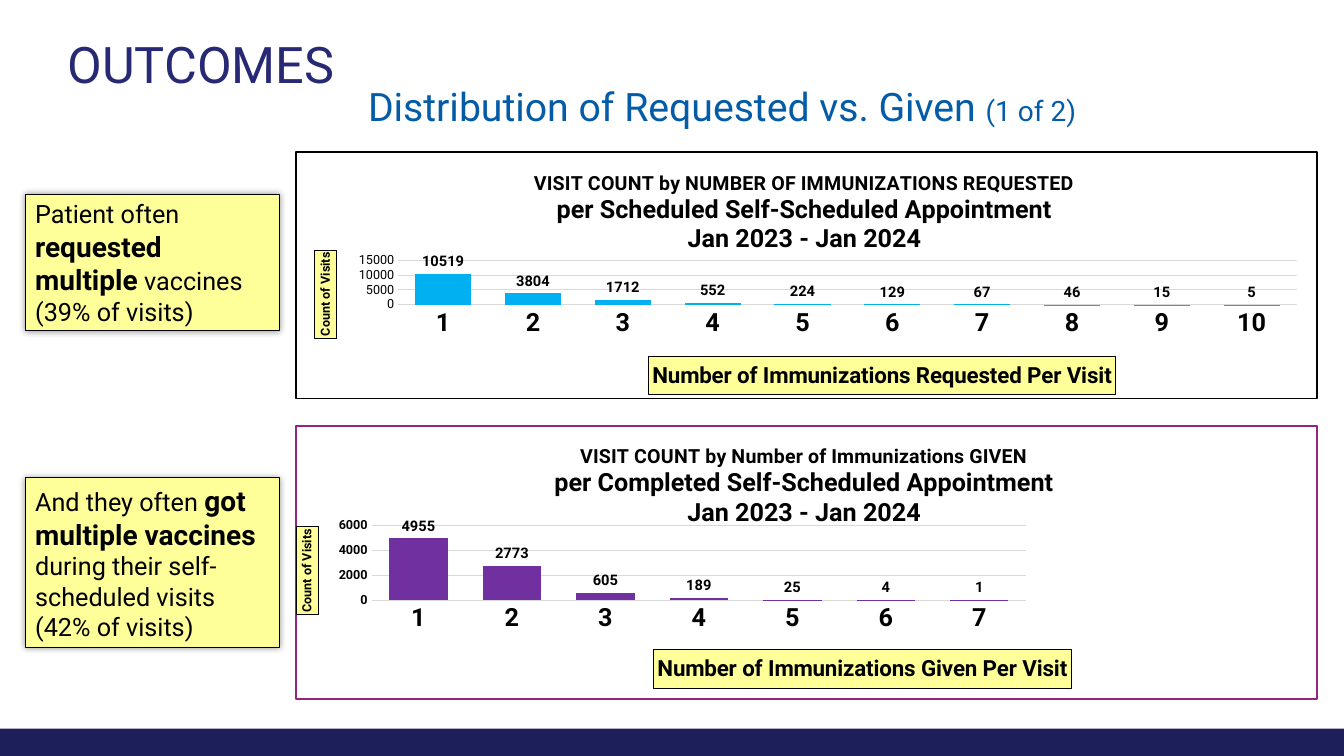
"""Build the outcomes slide comparing immunizations requested with immunizations given."""
from lxml import etree
from pptx import Presentation, util as u
from pptx.chart.data import CategoryChartData
from pptx.dml.color import RGBColor
from pptx.enum import chart as ch, shapes, text
from pptx.oxml import parse_xml
from pptx.oxml.ns import nsdecls, qn

COLORS = {"navy": "1D1F5B", "title": "272974", "subtitle": "045CA7", "note": "FFFF99", "black": "000000",
          "white": "FFFFFF", "grid": "D9D9D9", "requested": "00B0F0", "given": "7030A0", "given_edge": "902681"}
FONT = "Roboto"
WIDTH, HEIGHT = 13.33, 7.5
NOTE_LEFT, NOTE_WIDTH = 0.25, 2.52
CHART_LEFT, CHART_WIDTH = 2.93, 10.14


def style(font, size, color="black", bold=False):
    font.name, font.size, font.bold = FONT, u.Pt(size), bold
    font.color.rgb = RGBColor.from_string(COLORS[color])


def set_layout(element, *shares):
    for stale in element.findall(qn("c:layout")):
        element.remove(stale)
    layout = parse_xml(f'<c:layout {nsdecls("c")}><c:manualLayout/></c:layout>')
    tags = ["xMode", "yMode", "x", "y", "w", "h"][:2 + len(shares)]
    values = ["edge", "edge", *shares]
    if len(shares) == 4:
        tags, values = ["layoutTarget", *tags], ["inner", *values]
    for tag, value in zip(tags, values):
        etree.SubElement(layout[0], qn(f"c:{tag}")).set("val", str(value))
    element.insert(0 if element.find(qn("c:tx")) is None else 1, layout)


prs = Presentation()
prs.slide_width, prs.slide_height = u.Inches(WIDTH), u.Inches(HEIGHT)
slide = prs.slides.add_slide(prs.slide_layouts[1])

headings = [
    (slide.shapes.title, (0.67, 0.38, 12.06, 0.57), [("OUTCOMES", 36)], "title"),
    (slide.placeholders[1], (3.65, 0.88, 9.07, 0.4),
     [("Distribution of Requested vs. Given ", 28), ("(1 of 2)", 20)], "subtitle"),
]
for heading, place, pieces, color in headings:
    heading.left, heading.top, heading.width, heading.height = map(u.Inches, place)
    frame = heading.text_frame
    frame.margin_left = frame.margin_right = frame.margin_top = frame.margin_bottom = 0
    frame.vertical_anchor, frame.auto_size = text.MSO_ANCHOR.MIDDLE, text.MSO_AUTO_SIZE.NONE
    line = frame.paragraphs[0]
    line.alignment, line.line_spacing, line.space_before = text.PP_ALIGN.LEFT, 0.9, u.Pt(0)
    properties = line._p.get_or_add_pPr()
    properties.set("marL", "0")
    properties.set("indent", "0")
    etree.SubElement(properties, qn("a:buNone"))
    for wording, size in pieces:
        run = line.add_run()
        run.text = wording
        style(run.font, size, color)

footer = slide.shapes.add_shape(shapes.MSO_SHAPE.RECTANGLE, 0, u.Inches(7.23), prs.slide_width, u.Inches(0.27))
footer.shadow.inherit = False
footer.fill.solid()
footer.fill.fore_color.rgb = RGBColor.from_string(COLORS["navy"])
footer.line.fill.background()

notes = [
    (1.93, 1.35, [[("Patient often ", False), ("requested multiple", True), (" vaccines", False)],
                  [("(39% of visits)", False)]]),
    (4.74, 1.68, [[("And they often ", False), ("got multiple vaccines ", True),
                   ("during their self-scheduled visits", False)], [("(42% of visits)", False)]]),
]
for top, height, paragraphs in notes:
    note = slide.shapes.add_shape(shapes.MSO_SHAPE.RECTANGLE, *map(u.Inches, (NOTE_LEFT, top, NOTE_WIDTH, height)))
    note.fill.solid()
    note.fill.fore_color.rgb = RGBColor.from_string(COLORS["note"])
    note.line.color.rgb = RGBColor.from_string(COLORS["black"])
    note.line.width = u.Pt(0.75)
    note.shadow.inherit = False
    note._element.spPr.find(qn("a:effectLst")).append(parse_xml(
        f'<a:outerShdw {nsdecls("a")} blurRad="{u.Pt(5)}" dist="0" dir="0" algn="ctr" rotWithShape="0">'
        f'<a:srgbClr val="{COLORS["black"]}"><a:alpha val="40000"/></a:srgbClr></a:outerShdw>'))
    frame = note.text_frame
    frame.word_wrap, frame.vertical_anchor = True, text.MSO_ANCHOR.MIDDLE
    for index, pieces in enumerate(paragraphs):
        line = frame.add_paragraph() if index else frame.paragraphs[0]
        line.alignment = text.PP_ALIGN.LEFT
        for wording, strong in pieces:
            run = line.add_run()
            run.text = wording
            style(run.font, 20 if strong else 18, bold=strong)

panels = [
    dict(top=4.22, height=2.72, edge="given_edge", bar="given", visits=[4955, 2773, 605, 189, 25, 4, 1],
         title="VISIT COUNT by Number of Immunizations GIVEN\nper Completed Self-Scheduled Appointment",
         axis="Number of Immunizations Given Per Visit", peak=6000, step=2000, bold_scale=True,
         plot=(0.074, 0.364, 0.641, 0.274), title_at=(0.25, 0.05), axis_at=(0.35, 0.82), count_at=(0, 0.37)),
    dict(top=1.5, height=2.46, edge="black", bar="requested",
         visits=[10519, 3804, 1712, 552, 224, 129, 67, 46, 15, 5],
         title="VISIT COUNT by NUMBER OF IMMUNIZATIONS REQUESTED\nper Scheduled Self-Scheduled Appointment",
         axis="Number of Immunizations Requested Per Visit", peak=15000, step=5000, bold_scale=False,
         plot=(0.1, 0.44, 0.88, 0.18), title_at=(0.23, 0.06), axis_at=(0.345, 0.83), count_at=(0.018, 0.4)),
]
for panel in panels:
    data = CategoryChartData()
    data.categories = [str(n + 1) for n in range(len(panel["visits"]))]
    data.add_series("Series 1", panel["visits"])
    place = map(u.Inches, (CHART_LEFT, panel["top"], CHART_WIDTH, panel["height"]))
    chart = slide.shapes.add_chart(ch.XL_CHART_TYPE.COLUMN_CLUSTERED, *place, data).chart
    style(chart.font, 10)
    chart.has_legend = False
    chart._chartSpace.find(qn("c:chart")).addnext(parse_xml(
        f'<c:spPr {nsdecls("c", "a")}><a:solidFill><a:srgbClr val="{COLORS["white"]}"/></a:solidFill>'
        f'<a:ln w="{u.Pt(1)}"><a:solidFill><a:srgbClr val="{COLORS[panel["edge"]]}"/></a:solidFill></a:ln></c:spPr>'))
    set_layout(chart._chartSpace.find(".//" + qn("c:plotArea")), *panel["plot"])

    chart.has_title = True
    chart.chart_title.text_frame.text = panel["title"] + "\nJan 2023 - Jan 2024"
    for line, size in zip(chart.chart_title.text_frame.paragraphs, (14, 18, 18)):
        style(line.font, size, bold=True)
    set_layout(chart.chart_title._element, *panel["title_at"])

    plot = chart.plots[0]
    plot.gap_width, plot.vary_by_categories, plot.has_data_labels = 60, False, True
    plot.data_labels.show_value = True
    plot.data_labels.position = ch.XL_LABEL_POSITION.OUTSIDE_END
    style(plot.data_labels.font, 10.5, bold=True)
    bars = plot.series[0].format.fill
    bars.solid()
    bars.fore_color.rgb = RGBColor.from_string(COLORS[panel["bar"]])

    doses, counts = chart.category_axis, chart.value_axis
    style(doses.tick_labels.font, 18, bold=True)
    style(counts.tick_labels.font, 9, bold=panel["bold_scale"])
    counts.minimum_scale, counts.maximum_scale, counts.major_unit = 0, panel["peak"], panel["step"]
    counts.format.line.fill.background()
    for rule in (doses.format.line, counts.major_gridlines.format.line):
        rule.color.rgb = RGBColor.from_string(COLORS["grid"])
        rule.width = u.Pt(0.75)
    for axis, wording, size, spot in ((doses, panel["axis"], 16, panel["axis_at"]),
                                      (counts, "Count of Visits", 9, panel["count_at"])):
        axis.major_tick_mark = axis.minor_tick_mark = ch.XL_TICK_MARK.NONE
        label = axis.axis_title
        label.text_frame.text = wording
        style(label.text_frame.paragraphs[0].font, size, bold=True)
        label.format.fill.solid()
        label.format.fill.fore_color.rgb = RGBColor.from_string(COLORS["note"])
        label.format.line.color.rgb = RGBColor.from_string(COLORS["black"])
        label.format.line.width = u.Pt(0.75)
        set_layout(label._element, *spot)
    turned = counts.axis_title._element.find(".//" + qn("a:bodyPr"))
    turned.set("rot", "-5400000")
    turned.set("vert", "horz")

prs.save("out.pptx")
